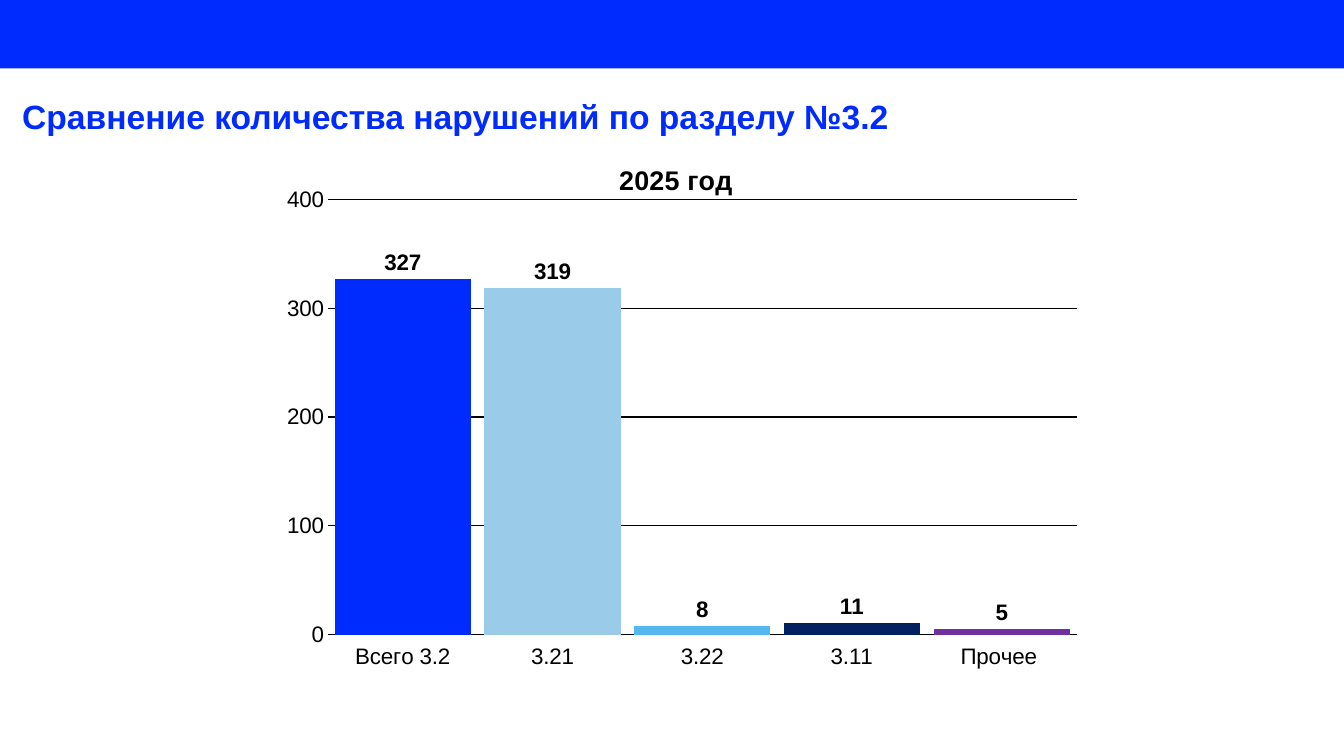
"""Build a slide with a column chart of violations under section 3.2."""
from lxml.etree import SubElement
from pptx import Presentation
from pptx.chart.data import CategoryChartData
from pptx.dml.color import RGBColor
from pptx.enum.chart import XL_CHART_TYPE, XL_LABEL_POSITION, XL_TICK_LABEL_POSITION, XL_TICK_MARK
from pptx.enum.shapes import MSO_SHAPE
from pptx.enum.text import MSO_ANCHOR, PP_ALIGN
from pptx.oxml.ns import qn
from pptx.util import Inches, Pt

BLUE = "002BFF"
BLACK = "000000"
VIOLATIONS = [
    ("Всего 3.2", 327, BLUE),
    ("3.21", 319, "9ACBE9"),
    ("3.22", 8, "54B7EE"),
    ("3.11", 11, "002060"),
    ("Прочее ", 5, "7030A0"),
]


def rgb(color):
    return RGBColor.from_string(color)


def set_font(font, size, color=BLACK, bold=False):
    font.name = "Arial"
    font.size = Pt(size)
    font.bold = bold
    font.color.rgb = rgb(color)


prs = Presentation()
prs.slide_width = Inches(13.33)
prs.slide_height = Inches(7.5)
s = prs.slides.add_slide(prs.slide_layouts[5])

band = s.shapes.add_shape(MSO_SHAPE.RECTANGLE, 0, 0, prs.slide_width, Inches(0.68))
band.shadow.inherit = False
band.fill.solid()
band.fill.fore_color.rgb = rgb(BLUE)
band.line.fill.background()

title = s.shapes.title
title.left, title.top = Inches(0.17), Inches(0.95)
title.width, title.height = Inches(12.3), Inches(0.5)
tf = title.text_frame
tf.margin_left = tf.margin_right = tf.margin_top = tf.margin_bottom = Inches(0.05)
tf.vertical_anchor = MSO_ANCHOR.TOP
tf.word_wrap = True
p = tf.paragraphs[0]
p.text = "Сравнение количества нарушений по разделу №3.2"
p.alignment = PP_ALIGN.LEFT
p.line_spacing = 0.9
set_font(p.font, 24, BLUE, True)

data = CategoryChartData(number_format="General")
data.categories = [name for name, count, color in VIOLATIONS]
data.add_series("2025 год", [count for name, count, color in VIOLATIONS])
chart = s.shapes.add_chart(
    XL_CHART_TYPE.COLUMN_CLUSTERED,
    Inches(2.69), Inches(1.4), Inches(8.03), Inches(5.38), data,
).chart
set_font(chart.font, 10)
chart.has_legend = False
chart.has_title = True
p = chart.chart_title.text_frame.paragraphs[0]
p.text = "2025 год"
set_font(p.font, 19.2, bold=True)
chart.chart_title.include_in_layout = True

for axis in (chart.category_axis, chart.value_axis):
    axis.major_tick_mark = axis.minor_tick_mark = XL_TICK_MARK.NONE
    axis.format.line.fill.background()
    set_font(axis.tick_labels.font, 16)
chart.category_axis.tick_label_position = XL_TICK_LABEL_POSITION.LOW
counts = chart.value_axis
counts.minimum_scale, counts.maximum_scale, counts.major_unit = 0, 400, 100
counts.tick_labels.number_format = "0"
counts.tick_labels.number_format_is_linked = False
counts.has_major_gridlines = True
counts.major_gridlines.format.line.color.rgb = rgb(BLACK)
counts.major_gridlines.format.line.width = Pt(1)

plot = chart.plots[0]
plot.gap_width = 10
plot.overlap = -100
plot.vary_by_categories = False
series = plot.series[0]
series.format.fill.solid()
series.format.fill.fore_color.rgb = rgb(BLUE)
for i, (name, count, color) in enumerate(VIOLATIONS[1:], 1):
    fill = series.points[i].format.fill
    fill.solid()
    fill.fore_color.rgb = rgb(color)
labels = series.data_labels
labels.show_value = True
labels.position = XL_LABEL_POSITION.OUTSIDE_END
labels.number_format = "0"
labels.number_format_is_linked = False
set_font(labels.font, 16, bold=True)

area = chart.element.find(".//" + qn("c:plotArea"))
for old in area.findall(qn("c:layout")):
    area.remove(old)
layout = SubElement(area, qn("c:layout"))
area.insert(0, layout)
manual = SubElement(layout, qn("c:manualLayout"))
for tag, val in [
    ("layoutTarget", "inner"), ("xMode", "edge"), ("yMode", "edge"),
    ("x", "0.07"), ("y", "0.108"), ("w", "0.925"), ("h", "0.802"),
]:
    SubElement(manual, qn("c:" + tag)).set("val", val)

prs.save("out.pptx")
